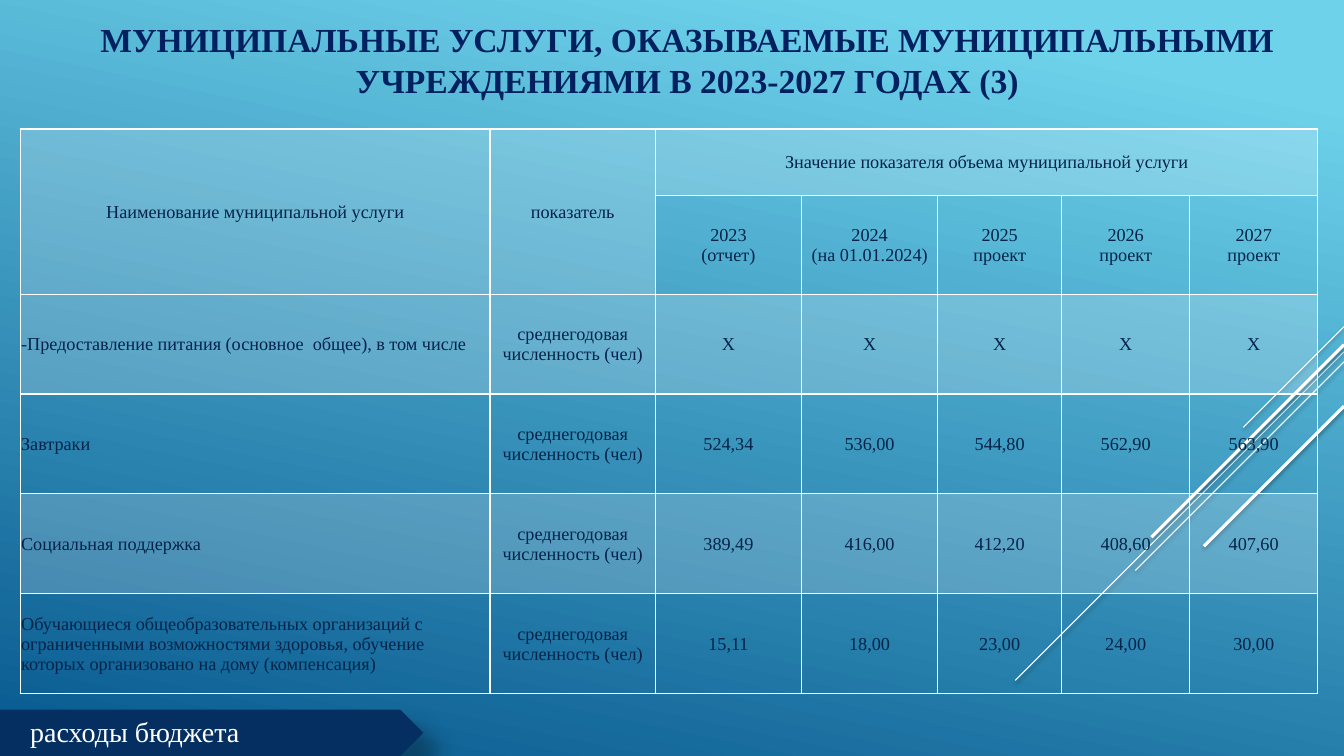
from pptx import Presentation
from pptx.dml.color import RGBColor
from pptx.enum.shapes import MSO_CONNECTOR, MSO_SHAPE
from pptx.enum.text import MSO_ANCHOR, PP_ALIGN
from pptx.oxml import parse_xml
from pptx.oxml.ns import nsdecls, qn
from pptx.util import Inches, Pt

COLORS = {"sky": "6ED2EB", "deep": "06588E", "white": "FFFFFF",
          "title": "002060", "text": "042349", "plate": "052F61", "shade": "000000"}
FONT = "Times New Roman"
TITLE = "МУНИЦИПАЛЬНЫЕ УСЛУГИ, ОКАЗЫВАЕМЫЕ МУНИЦИПАЛЬНЫМИ УЧРЕЖДЕНИЯМИ В 2023-2027 ГОДАХ (3)"
FOOTER = "расходы бюджета"
UNIT = "среднегодовая численность (чел)"
HEADS = [
    ["Наименование муниципальной услуги", "показатель",
     "Значение показателя объема муниципальной услуги", "", "", "", ""],
    ["", "", ("2023", "(отчет)"), ("2024", "(на 01.01.2024)"),
     "2025\nпроект", "2026\nпроект", "2027\nпроект"],
]
SERVICES = [
    ("-Предоставление питания (основное  общее), в том числе", ["Х"] * 5),
    ("Завтраки", ["524,34", "536,00", "544,80", "562,90", "563,90"]),
    ("Социальная поддержка", ["389,49", "416,00", "412,20", "408,60", "407,60"]),
    ("Обучающиеся общеобразовательных организаций с ограниченными возможностями "
     "здоровья, обучение которых организовано на дому (компенсация)",
     ["15,11", "18,00", "23,00", "24,00", "30,00"]),
]
WIDTHS = [4.66, 1.64, 1.45, 1.35, 1.23, 1.27, 1.27]
HEIGHTS = [0.66, 0.98] + [0.99] * 4
MERGES = [(0, 0, 1, 0), (0, 1, 1, 1), (0, 2, 0, 6)]
EDGE = 13.33
RAYS = [(3.24, 1, 0.75), (3.49, 3.26, 0.75), (3.59, 2.07, 0.75),
        (3.42, 1.91, 2.25), (4.03, 1.39, 2.25)]


def color(name):
    """Return the named colour."""
    return RGBColor.from_string(COLORS[name])


def shadow(shape, alpha, blur, dist, angle):
    """Give a shape an outer shadow."""
    shape._element.spPr.append(parse_xml(
        f'<a:effectLst {nsdecls("a")}><a:outerShdw blurRad="{Pt(blur)}" dist="{Pt(dist)}" '
        f'dir="{angle * 60000}" algn="tl" rotWithShape="0"><a:srgbClr val="{COLORS["shade"]}">'
        f'<a:alpha val="{alpha * 1000}"/></a:srgbClr></a:outerShdw></a:effectLst>'))


def write(frame, text, size, tint, align, bold=False):
    """Write paragraphs, breaking lines at newlines."""
    frame.word_wrap = True
    paras = text if isinstance(text, tuple) else (text,)
    for i, line in enumerate(paras):
        para = frame.add_paragraph() if i else frame.paragraphs[0]
        para.alignment = align
        for j, part in enumerate(line.split("\n")):
            if j:
                para.add_line_break()
            run = para.add_run()
            run.text = part
            font = run.font
            font.name, font.size, font.bold = FONT, Pt(size), bold
            font.color.rgb = color(tint)


def style(cell, band):
    """Set the margins, fill and borders of a cell."""
    cell.margin_left = cell.margin_right = cell.margin_top = Inches(0.01)
    cell.margin_bottom = 0
    cell.vertical_anchor = MSO_ANCHOR.MIDDLE
    props = cell._tc.get_or_add_tcPr()
    if band:
        cell.fill.solid()
        cell.fill.fore_color.rgb = color("white")
        tint = props.find(".//" + qn("a:srgbClr"))
        tint.append(parse_xml(f'<a:alpha {nsdecls("a")} val="20000"/>'))
    else:
        cell.fill.background()
    for i, side in enumerate("LRTB"):
        props.insert(i, parse_xml(
            f'<a:ln{side} {nsdecls("a")} w="{Pt(1)}"><a:solidFill>'
            f'<a:srgbClr val="{COLORS["white"]}"/></a:solidFill></a:ln{side}>'))


def backdrop(slide):
    """Paint the background and the diagonal rays."""
    fill = slide.background.fill
    fill.gradient()
    fill.gradient_angle = 258
    for stop, name, pos in zip(fill.gradient_stops, ("sky", "deep"), (0.1, 1)):
        stop.color.rgb = color(name)
        stop.position = pos
    for top, run, width in RAYS:
        ray = slide.shapes.add_connector(
            MSO_CONNECTOR.STRAIGHT, Inches(EDGE), Inches(top),
            Inches(EDGE - run), Inches(top + run))
        ray.line.color.rgb = color("white")
        ray.line.width = Pt(width)
        shadow(ray, 38, 3.1, 1.6, 90)


def grid(slide):
    """Build the table of services."""
    rows = HEADS + [[name, UNIT] + values for name, values in SERVICES]
    table = slide.shapes.add_table(
        len(rows), len(WIDTHS), Inches(0.2), Inches(1.28),
        Inches(sum(WIDTHS)), Inches(sum(HEIGHTS))).table
    table.first_row = table.horz_banding = False
    for col, width in zip(table.columns, WIDTHS):
        col.width = Inches(width)
    for row, height in zip(table.rows, HEIGHTS):
        row.height = Inches(height)
    for r, row in enumerate(rows):
        for c, text in enumerate(row):
            cell = table.cell(r, c)
            style(cell, r % 2 == 0)
            if text:
                left = c == 0 and r >= len(HEADS)
                write(cell.text_frame, text, 13, "text",
                      PP_ALIGN.LEFT if left else PP_ALIGN.CENTER)
    for top, left, low, right in MERGES:
        table.cell(top, left).merge(table.cell(low, right))


def main():
    """Build and save the slide."""
    deck = Presentation()
    deck.slide_width, deck.slide_height = Inches(EDGE), Inches(7.5)
    slide = deck.slides.add_slide(deck.slide_layouts[6])
    backdrop(slide)
    title = slide.shapes.add_textbox(Inches(0.2), Inches(0.14), Inches(13.13), Inches(0.9))
    frame = title.text_frame
    frame.vertical_anchor = MSO_ANCHOR.BOTTOM
    frame.margin_left = Inches(0.2)
    write(frame, TITLE, 24, "title", PP_ALIGN.CENTER, True)
    grid(slide)
    plate = slide.shapes.add_shape(
        MSO_SHAPE.PENTAGON, 0, Inches(7.04), Inches(4.2), Inches(0.46))
    plate.fill.solid()
    plate.fill.fore_color.rgb = color("plate")
    plate.line.fill.background()
    shadow(plate, 30, 15, 18, 45)
    label = slide.shapes.add_textbox(Inches(0.2), Inches(7.04), Inches(3.78), Inches(0.44))
    write(label.text_frame, FOOTER, 20, "white", PP_ALIGN.LEFT)
    deck.save("out.pptx")


if __name__ == "__main__":
    main()
